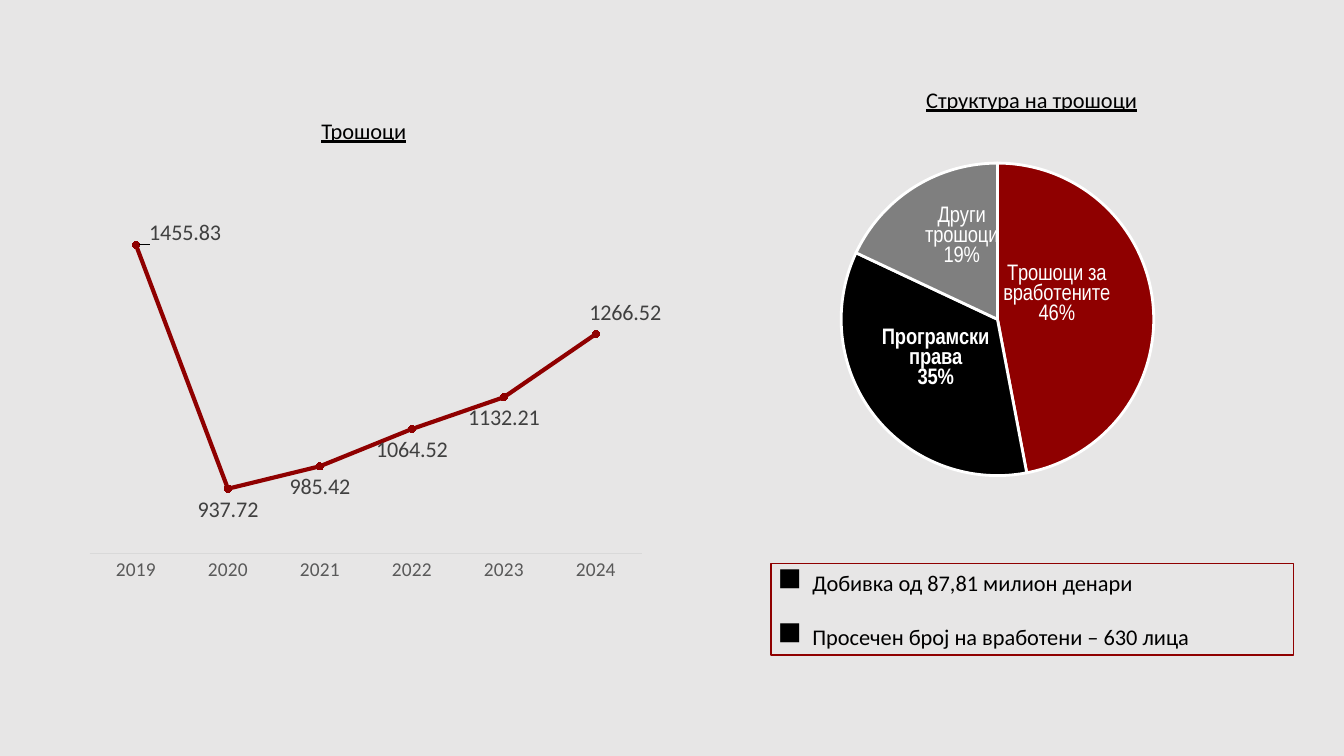
from lxml.etree import SubElement
from pptx import Presentation
from pptx.chart.data import CategoryChartData
from pptx.dml.color import RGBColor
from pptx.enum.chart import XL_CHART_TYPE, XL_LABEL_POSITION, XL_MARKER_STYLE, XL_TICK_MARK
from pptx.enum.shapes import MSO_SHAPE
from pptx.enum.text import MSO_ANCHOR, PP_ALIGN
from pptx.oxml import parse_xml
from pptx.oxml.ns import nsdecls, qn
from pptx.util import Inches, Pt

RED, BLACK, GRAY, WHITE = "8F0000", "000000", "7F7F7F", "FFFFFF"
PAPER, AXIS_TEXT, AXIS_LINE, VALUE_TEXT = "E7E6E6", "595959", "D9D9D9", "404040"


def color(value):
    return RGBColor.from_string(value)


def assign(target, values):
    for name, value in values.items():
        setattr(target, name, value)


def paint(fill, value):
    fill.solid()
    fill.fore_color.rgb = color(value)


class Deck:
    body = {"name": "Calibri", "size": Pt(16)}
    narrow = {"name": "Arial Narrow", "size": Pt(16)}

    def __init__(self):
        self.presentation = Presentation()
        assign(self.presentation, {"slide_width": Inches(13.33), "slide_height": Inches(7.5)})
        self.slide = self.presentation.slides.add_slide(self.presentation.slide_layouts[6])
        paint(self.slide.background.fill, PAPER)

    def percent(self, *box):
        sides = (self.presentation.slide_width, self.presentation.slide_height) * 2
        return [int(side * share / 100) for side, share in zip(sides, box)]

    def style(self, font, value, **values):
        assign(font, {**self.body, **values})
        font.color.rgb = color(value)

    def heading(self, text, box):
        frame = self.slide.shapes.add_textbox(*self.percent(*box)).text_frame
        frame.word_wrap = False
        paragraph = frame.paragraphs[0]
        paragraph.alignment = PP_ALIGN.CENTER
        run = paragraph.add_run()
        run.text = text
        self.style(run.font, BLACK, underline=True)

    def bullet_box(self, lines, box):
        shape = self.slide.shapes.add_shape(MSO_SHAPE.RECTANGLE, *self.percent(*box))
        shape.shadow.inherit = False
        shape.fill.background()
        shape.line.color.rgb = color(RED)
        shape.line.width = Pt(1)
        frame = shape.text_frame
        assign(frame, {"word_wrap": True, "vertical_anchor": MSO_ANCHOR.MIDDLE})
        frame.text = "\n".join(lines)
        for index, paragraph in enumerate(frame.paragraphs):
            assign(paragraph, {"alignment": PP_ALIGN.LEFT, "space_before": Pt(19.5 * index)})
            properties = paragraph._p.get_or_add_pPr()
            properties.set("marL", str(Inches(0.31)))
            properties.set("indent", str(-Inches(0.31)))
            SubElement(properties, qn("a:buFont"), typeface="Wingdings 2")
            SubElement(properties, qn("a:buChar"), char="➢")
            self.style(paragraph.runs[0].font, BLACK)

    def chart(self, kind, categories, values, box, plot_box):
        data = CategoryChartData()
        data.categories = categories
        data.add_series("Трошоци", values)
        chart = self.slide.shapes.add_chart(kind, *self.percent(*box), data).chart
        assign(chart, {"has_title": False, "has_legend": False})
        self.style(chart.font, BLACK, size=Pt(10))
        area = chart._chartSpace.chart.plotArea
        for layout in area.findall(qn("c:layout")):
            area.remove(layout)
        area.insert(0, self.layout(plot_box, inner=True))
        return chart

    def layout(self, values, inner=False):
        parts = '<c:layoutTarget val="inner"/><c:xMode val="edge"/><c:yMode val="edge"/>' if inner else ""
        parts += "".join(f'<c:{name} val="{value}"/>' for name, value in zip("xywh", values))
        return parse_xml(f'<c:layout {nsdecls("c")}><c:manualLayout>{parts}</c:manualLayout></c:layout>')

    def place_label(self, label, position, shift):
        label.position = position
        label._get_or_add_dLbl().insert(1, self.layout(shift))

    def line_chart(self, categories, values, box, plot_box, moved_labels):
        chart = self.chart(XL_CHART_TYPE.LINE_MARKERS, categories, values, box, plot_box)
        assign(chart.value_axis, {"visible": False, "has_major_gridlines": False,
                                  "minimum_scale": 800, "maximum_scale": 1500})
        axis = chart.category_axis
        assign(axis, {"major_tick_mark": XL_TICK_MARK.NONE, "minor_tick_mark": XL_TICK_MARK.NONE})
        self.style(axis.tick_labels.font, AXIS_TEXT, size=Pt(14))
        axis.format.line.color.rgb = color(AXIS_LINE)
        axis.format.line.width = Pt(0.75)
        series = chart.plots[0].series[0]
        series.smooth = False
        series.format.line.color.rgb = color(RED)
        series.format.line.width = Pt(3)
        assign(series.marker, {"style": XL_MARKER_STYLE.CIRCLE, "size": 5})
        paint(series.marker.format.fill, RED)
        series.marker.format.line.color.rgb = color(RED)
        assign(series.data_labels, {"show_value": True, "position": XL_LABEL_POSITION.BELOW})
        self.style(series.data_labels.font, VALUE_TEXT)
        for index, position, shift in moved_labels:
            label = series.points[index].data_label
            self.style(label.font, VALUE_TEXT)
            self.place_label(label, position, shift)

    def pie_chart(self, slices, box, plot_box):
        categories = [" ".join(lines[:-1]) for lines, *_ in slices]
        values = [value for _, value, *_ in slices]
        chart = self.chart(XL_CHART_TYPE.PIE, categories, values, box, plot_box)
        chart.plots[0].vary_by_categories = True
        series = chart.plots[0].series[0]
        for index, (lines, _, fill, bold, shift) in enumerate(slices):
            point = series.points[index]
            paint(point.format.fill, fill)
            point.format.line.color.rgb = color(WHITE)
            point.format.line.width = Pt(2)
            frame = point.data_label.text_frame
            frame.text = "\n".join(lines)
            for paragraph in frame.paragraphs:
                self.style(paragraph.runs[0].font, WHITE, **self.narrow, bold=bold)
            self.place_label(point.data_label, XL_LABEL_POSITION.CENTER, shift)


def main():
    deck = Deck()
    deck.line_chart(
        [str(year) for year in range(2019, 2025)],
        [1455.83, 937.72, 985.42, 1064.52, 1132.21, 1266.52],
        (4.95, 27.07, 44.25, 51.87), (0.04, 0.05, 0.94, 0.84),
        [(0, XL_LABEL_POSITION.RIGHT, (0.01, -0.03)), (5, XL_LABEL_POSITION.ABOVE, (0.05, 0))])
    deck.heading("Трошоци", (22.8, 14.8, 8.55, 4.93))
    deck.pie_chart(
        [(("Трошоци за", "вработените", "46%"), 47, RED, False, (-0.03, -0.04)),
         (("Програмски", "права", "35%"), 35, BLACK, True, (0, -0.02)),
         (("Други", "трошоци", "19%"), 18, GRAY, False, (0.01, -0.04))],
        (51.99, 13.2, 45.83, 55.87), (0.23, 0.15, 0.51, 0.74))
    deck.heading("Структура на трошоци", (66.45, 10.67, 20.62, 4.93))
    deck.bullet_box(
        ["Добивка од 87,81 милион денари", "Просечен број на вработени – 630 лица"],
        (57.38, 74.53, 38.85, 12.13))
    deck.presentation.save("out.pptx")


if __name__ == "__main__":
    main()
